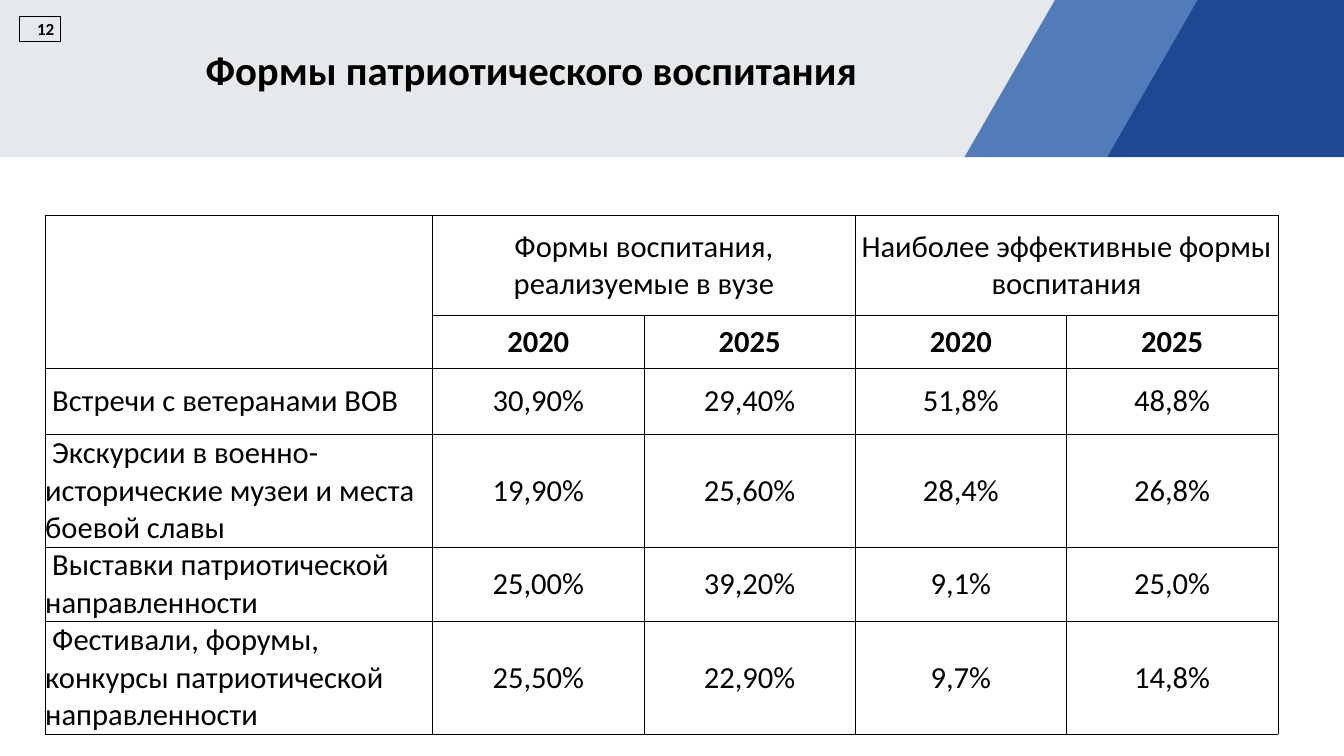
from lxml.etree import SubElement
from pptx import Presentation
from pptx.dml.color import RGBColor
from pptx.enum.shapes import MSO_SHAPE
from pptx.enum.text import MSO_ANCHOR, MSO_AUTO_SIZE, PP_ALIGN
from pptx.oxml.ns import qn
from pptx.util import Cm, Pt

COLORS = {"grey": "E6E9EB", "light": "517BB9", "dark": "1D4992", "black": "000000"}
FONT = "Calibri"
W, H = 55.85, 31.42
HEADER_H = 6.53

GROUPS = ["Формы воспитания, реализуемые в вузе", "Наиболее эффективные формы воспитания"]
YEARS = ["2020", "2025"]
FORMS = [
    ("Встречи с ветеранами ВОВ", "30,90%", "29,40%", "51,8%", "48,8%"),
    ("Экскурсии в военно-исторические музеи и места боевой славы",
     "19,90%", "25,60%", "28,4%", "26,8%"),
    ("Выставки патриотической направленности", "25,00%", "39,20%", "9,1%", "25,0%"),
    ("Фестивали, форумы, конкурсы патриотической направленности",
     "25,50%", "22,90%", "9,7%", "14,8%"),
]
COL_WIDTHS = [16.1] + [8.78] * 4
ROW_HEIGHTS = [4.17, 2.18, 2.77, 4.65, 3.1, 4.65]


def rgb(name):
    return RGBColor.from_string(COLORS[name])


def write(tf, text, size=36, bold=False, align=PP_ALIGN.CENTER, indent=0):
    """Fill a text frame with one formatted paragraph."""
    tf.word_wrap = True
    p = tf.paragraphs[0]
    p.alignment = align
    p.space_before = Pt(0)
    pPr = p._p.get_or_add_pPr()
    pPr.set("marL", "0")
    pPr.set("indent", str(Cm(indent)))
    r = p.add_run()
    r.text = text
    r.font.name, r.font.size, r.font.bold = FONT, Pt(size), bold
    r.font.color.rgb = rgb("black")


def add_band(s, points, color):
    (x0, y0), *rest = [(Cm(x), Cm(y)) for x, y in points]
    builder = s.shapes.build_freeform(x0, y0)
    builder.add_line_segments(rest, close=True)
    sp = builder.convert_to_shape()
    sp.shadow.inherit = False
    sp.fill.solid()
    sp.fill.fore_color.rgb = rgb(color)
    sp.line.fill.background()


def add_header(s, x, y, w, h):
    # Slanted bands: each edge leans by the same amount
    slant, right = 3.76, x + w
    first, second = x + 40.08, x + 46
    for left, end, color in [(x, first, "grey"), (first, second, "light"),
                             (second, right, "dark")]:
        top_left = left if left == x else left + slant
        top_end = end if end == right else end + slant
        add_band(s, [(left, y + h), (top_left, y), (top_end, y), (end, y + h)], color)

    # Title, raised above the bands
    title = s.shapes.title
    s.shapes._spTree.append(title._element)
    title.left, title.top = Cm(x + 2.57), Cm(y + 1.75)
    title.width, title.height = Cm(37.54), Cm(3.84)
    tf = title.text_frame
    tf.auto_size = MSO_AUTO_SIZE.NONE
    tf.vertical_anchor = MSO_ANCHOR.TOP
    write(tf, "Формы патриотического воспитания", size=48, bold=True, indent=1.5)

    # Slide number
    sp = s.shapes.add_shape(MSO_SHAPE.RECTANGLE, Cm(x + 0.81), Cm(y + 0.66),
                            Cm(1.7), Cm(1.07))
    sp.shadow.inherit = False
    sp.fill.background()
    sp.line.color.rgb = rgb("black")
    sp.line.width = Pt(0.75)
    sp.text_frame.vertical_anchor = MSO_ANCHOR.MIDDLE
    write(sp.text_frame, "12", size=20, bold=True, align=PP_ALIGN.RIGHT)


def format_cell(cell):
    cell.fill.background()
    cell.vertical_anchor = MSO_ANCHOR.MIDDLE
    cell.margin_left = cell.margin_right = cell.margin_top = cell.margin_bottom = 0
    tcPr = cell._tc.get_or_add_tcPr()
    for i, side in enumerate(("lnL", "lnR", "lnT", "lnB")):
        ln = SubElement(tcPr, qn(f"a:{side}"), w=str(Pt(0.5)))
        fill = SubElement(ln, qn("a:solidFill"))
        SubElement(fill, qn("a:srgbClr"), val=COLORS["black"])
        tcPr.insert(i, ln)


def add_forms_table(s, x, y):
    frame = s.shapes.add_table(len(ROW_HEIGHTS), len(COL_WIDTHS), Cm(x), Cm(y),
                               Cm(sum(COL_WIDTHS)), Cm(sum(ROW_HEIGHTS)))
    table = frame.table
    table.first_row = table.horz_banding = False
    for col, width in zip(table.columns, COL_WIDTHS):
        col.width = Cm(width)
    for row, height in zip(table.rows, ROW_HEIGHTS):
        row.height = Cm(height)
    for cell in table.iter_cells():
        format_cell(cell)

    # Two-level heading
    table.cell(0, 0).merge(table.cell(1, 0))
    for i, group in enumerate(GROUPS):
        c = 1 + i * len(YEARS)
        table.cell(0, c).merge(table.cell(0, c + len(YEARS) - 1))
        write(table.cell(0, c).text_frame, group)
        for j, year in enumerate(YEARS):
            write(table.cell(1, c + j).text_frame, year, bold=True)

    # Forms and their shares
    for i, (name, *shares) in enumerate(FORMS, start=2):
        write(table.cell(i, 0).text_frame, name, align=PP_ALIGN.LEFT, indent=0.29)
        for j, share in enumerate(shares, start=1):
            write(table.cell(i, j).text_frame, share)


def main():
    prs = Presentation()
    prs.slide_width, prs.slide_height = Cm(W), Cm(H)
    s = prs.slides.add_slide(prs.slide_layouts[5])
    add_header(s, 0, 0, W, HEADER_H)
    add_forms_table(s, 1.88, 8.94)
    prs.save("out.pptx")


if __name__ == "__main__":
    main()
